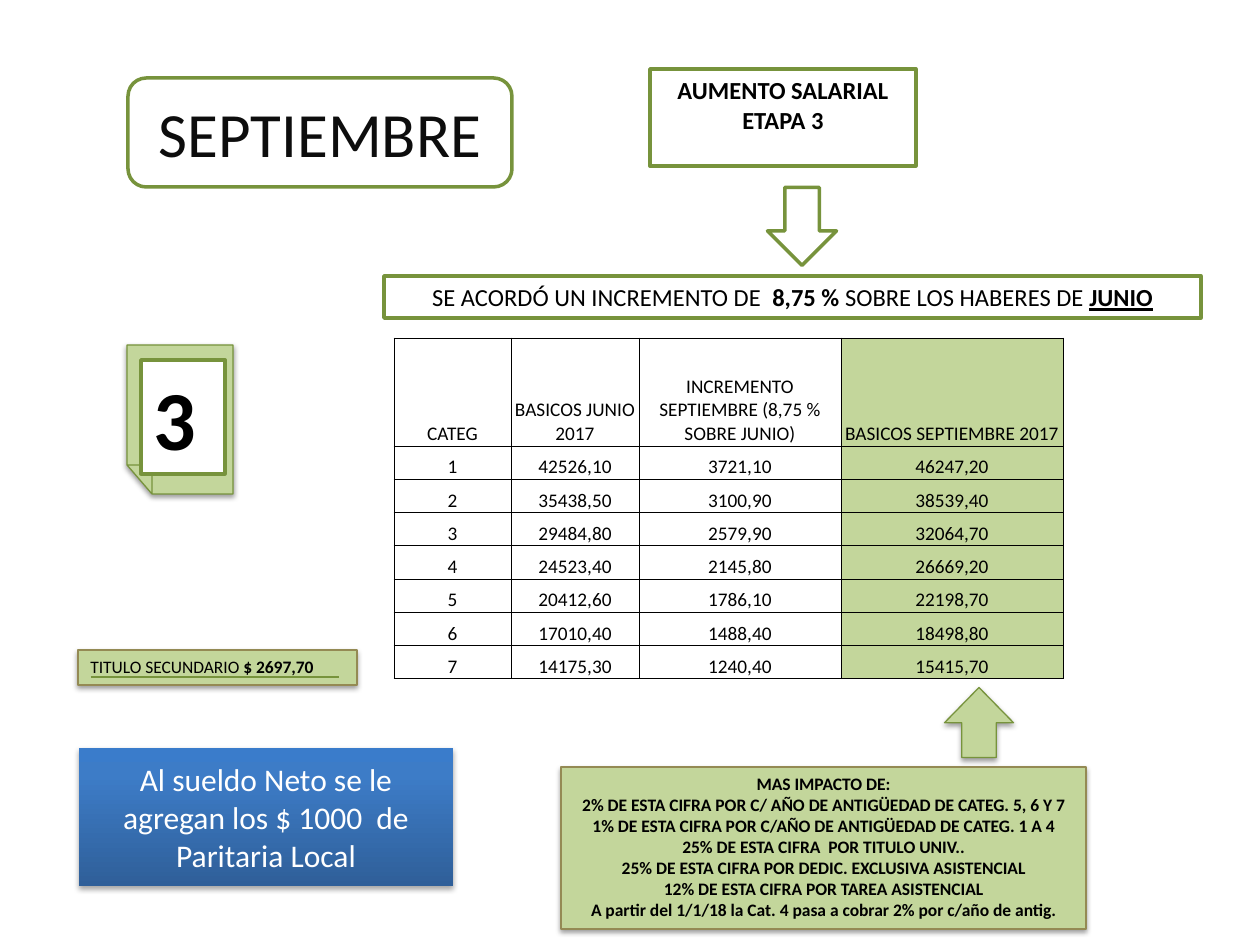
from lxml import etree
from pptx import Presentation
from pptx import util as u
from pptx.dml.color import RGBColor
from pptx.enum import shapes, text
from pptx.oxml import parse_xml
from pptx.oxml.ns import nsdecls, qn

PX = 914400 / 126
BLACK = RGBColor(0x00, 0x00, 0x00)
INK = RGBColor(0x0D, 0x0D, 0x0D)
WHITE = RGBColor(0xFF, 0xFF, 0xFF)
GREEN = RGBColor(0x77, 0x93, 0x3C)
LIME = RGBColor(0xC3, 0xD6, 0x9B)
TAN = RGBColor(0x94, 0x8A, 0x54)
BLUES = [(0, RGBColor(0x2F, 0x5F, 0x99)), (80, RGBColor(0x3D, 0x7C, 0xC7)),
         (100, RGBColor(0x3A, 0x7C, 0xCB))]

RECT = shapes.MSO_SHAPE.RECTANGLE
ARROW = shapes.MSO_SHAPE.RIGHT_ARROW
CENTER = text.PP_ALIGN.CENTER
LEFT = text.PP_ALIGN.LEFT

SALARIES = [
    ("CATEG", "BASICOS JUNIO 2017",
     "INCREMENTO SEPTIEMBRE (8,75 % SOBRE JUNIO)", "BASICOS SEPTIEMBRE 2017"),
    ("1", "42526,10", "3721,10", "46247,20"),
    ("2", "35438,50", "3100,90", "38539,40"),
    ("3", "29484,80", "2579,90", "32064,70"),
    ("4", "24523,40", "2145,80", "26669,20"),
    ("5", "20412,60", "1786,10", "22198,70"),
    ("6", "17010,40", "1488,40", "18498,80"),
    ("7", "14175,30", "1240,40", "15415,70"),
]
IMPACTS = [
    "MAS IMPACTO DE:",
    "2% DE ESTA CIFRA POR C/ AÑO DE ANTIGÜEDAD DE CATEG. 5, 6 Y 7",
    "1% DE ESTA CIFRA POR C/AÑO DE ANTIGÜEDAD DE CATEG. 1 A 4",
    "25% DE ESTA CIFRA  POR TITULO UNIV..",
    "25% DE ESTA CIFRA POR DEDIC. EXCLUSIVA ASISTENCIAL",
    "12% DE ESTA CIFRA POR TAREA ASISTENCIAL",
    "A partir del 1/1/18 la Cat. 4 pasa a cobrar 2% por c/año de antig.",
]


def px(length):
    return u.Emu(round(length * PX))


def write(frame, lines, size, color=BLACK, bold=False, align=CENTER,
          anchor=text.MSO_ANCHOR.TOP):
    frame.word_wrap = True
    frame.vertical_anchor = anchor
    for index, line in enumerate(lines):
        para = frame.paragraphs[0] if index == 0 else frame.add_paragraph()
        para.alignment = align
        for words, style in [(line, "")] if isinstance(line, str) else line:
            span = para.add_run()
            span.text = words
            span.font.name = "Calibri"
            span.font.size = u.Pt(size)
            span.font.color.rgb = color
            span.font.bold = bold or "b" in style
            span.font.underline = "u" in style


def add_shadow(shape, alpha=38, distance=1.6):
    effects = shape.element.spPr.find(qn("a:effectLst"))
    effects.append(parse_xml(
        f'<a:outerShdw {nsdecls("a")} blurRad="{u.Pt(3.1)}" dist="{u.Pt(distance)}" '
        f'dir="5400000" rotWithShape="0"><a:srgbClr val="000000">'
        f'<a:alpha val="{alpha * 1000}"/></a:srgbClr></a:outerShdw>'))


def paint(shape, fill, line, weight, shadow):
    shape.shadow.inherit = False
    shape.fill.solid()
    shape.fill.fore_color.rgb = fill
    if line is None:
        shape.line.fill.background()
    else:
        shape.line.color.rgb = line
        shape.line.width = u.Pt(weight)
    if shadow:
        add_shadow(shape)


def add_box(page, kind, left, top, width, height, fill=WHITE, line=GREEN,
            weight=2, shadow=False, rotation=0):
    box = page.shapes.add_shape(kind, px(left), px(top), px(width), px(height))
    paint(box, fill, line, weight, shadow)
    box.rotation = rotation
    return box


def add_gradient_box(page, left, top, width, height):
    box = add_box(page, RECT, left, top, width, height, line=None)
    box.fill.gradient()
    box.fill.gradient_angle = 90
    stops = box.element.spPr.find(qn("a:gradFill")).find(qn("a:gsLst"))
    for stop in list(stops):
        stops.remove(stop)
    for position, color in BLUES:
        stop = etree.SubElement(stops, qn("a:gs"), pos=str(position * 1000))
        etree.SubElement(stop, qn("a:srgbClr"), val=str(color))
    add_shadow(box, alpha=35, distance=1.8)
    return box


def add_folded_sheet(page, left, top, right, bottom, fold_x, fold_y):
    corner, fold, edge = (fold_x, bottom), (fold_x, fold_y), (left, fold_y)
    builder = page.shapes.build_freeform(*corner, scale=PX)
    builder.add_line_segments(
        [fold, edge, fold, corner, edge, (left, top), (right, top), (right, bottom)])
    paint(builder.convert_to_shape(), LIME, GREEN, 0.75, True)


def add_rule(page, left, right, y):
    rule = page.shapes.add_connector(
        shapes.MSO_CONNECTOR.STRAIGHT, px(left), px(y), px(right), px(y))
    rule.line.color.rgb = GREEN
    rule.line.width = u.Pt(0.75)
    etree.SubElement(rule.element.spPr, qn("a:effectLst"))


def add_borders(cell):
    properties = cell._tc.get_or_add_tcPr()
    for side in ("lnL", "lnR", "lnT", "lnB"):
        border = etree.SubElement(properties, qn(f"a:{side}"), w=str(u.Pt(0.5)))
        fill = etree.SubElement(border, qn("a:solidFill"))
        etree.SubElement(fill, qn("a:srgbClr"), val=str(BLACK))


def add_salary_table(page, left, top, widths, header, body):
    table = page.shapes.add_table(
        len(SALARIES), len(widths), px(left), px(top),
        px(sum(widths)), px(header + body)).table
    table.first_row = table.horz_banding = False
    for column, width in zip(table.columns, widths):
        column.width = px(width)
    for index, row in enumerate(table.rows):
        row.height = px(body / (len(SALARIES) - 1)) if index else px(header)
        for cell, words in zip(row.cells, SALARIES[index]):
            cell.margin_left = cell.margin_right = cell.margin_top = px(1)
            cell.margin_bottom = 0
            write(cell.text_frame, [words], 11)
            cell.vertical_anchor = text.MSO_ANCHOR.BOTTOM
            add_borders(cell)
            cell.fill.background()
        cell.fill.solid()
        cell.fill.fore_color.rgb = LIME


def main():
    deck = Presentation()
    deck.slide_width, deck.slide_height = px(1260), px(945)
    page = deck.slides.add_slide(deck.slide_layouts[6])
    middle = text.MSO_ANCHOR.MIDDLE
    soft = {"fill": LIME, "weight": 0.75, "shadow": True}

    stage = add_box(page, RECT, 650, 69, 266, 97)
    write(stage.text_frame, ["AUMENTO SALARIAL", "ETAPA 3"], 14, bold=True)
    impact = add_box(page, RECT, 561, 767, 525, 162, line=TAN, **soft)
    write(impact.text_frame, IMPACTS, 10, bold=True)
    up_arrow = add_box(page, ARROW, 944, 688, 70, 69, rotation=270, **soft)
    up_arrow.adjustments[1] = 0.51
    degree = add_box(page, RECT, 78, 650, 279, 35, line=TAN, **soft)
    write(degree.text_frame, [[("TITULO SECUNDARIO ", ""), ("$ 2697,70", "b")]],
          10, align=LEFT)
    add_rule(page, 91, 339, 677)

    add_folded_sheet(page, 127, 345, 233, 494, 152, 465)
    number = add_box(page, RECT, 141, 360, 84, 114)
    write(number.text_frame, ["3"], 48, bold=True, align=LEFT)

    add_box(page, ARROW, 763, 192, 78, 69, rotation=90)
    agreement = add_box(page, RECT, 384, 276, 817, 42)
    write(agreement.text_frame,
          [[("SE ACORDÓ UN INCREMENTO DE  ", ""), ("8,75 % ", "b"),
            ("SOBRE LOS HABERES DE ", ""), ("JUNIO", "bu")]], 14)
    add_salary_table(page, 394, 338, [117, 128, 202, 222], 108, 233)

    month = add_box(page, shapes.MSO_SHAPE.ROUNDED_RECTANGLE, 128, 78, 384, 109)
    write(month.text_frame, ["SEPTIEMBRE"], 36, color=INK, anchor=middle)
    bonus = add_gradient_box(page, 79, 748, 374, 138)
    write(bonus.text_frame,
          ["Al sueldo Neto se le agregan los $ 1000  de Paritaria Local"],
          18, color=WHITE, anchor=middle)

    deck.save("out.pptx")


if __name__ == "__main__":
    main()
